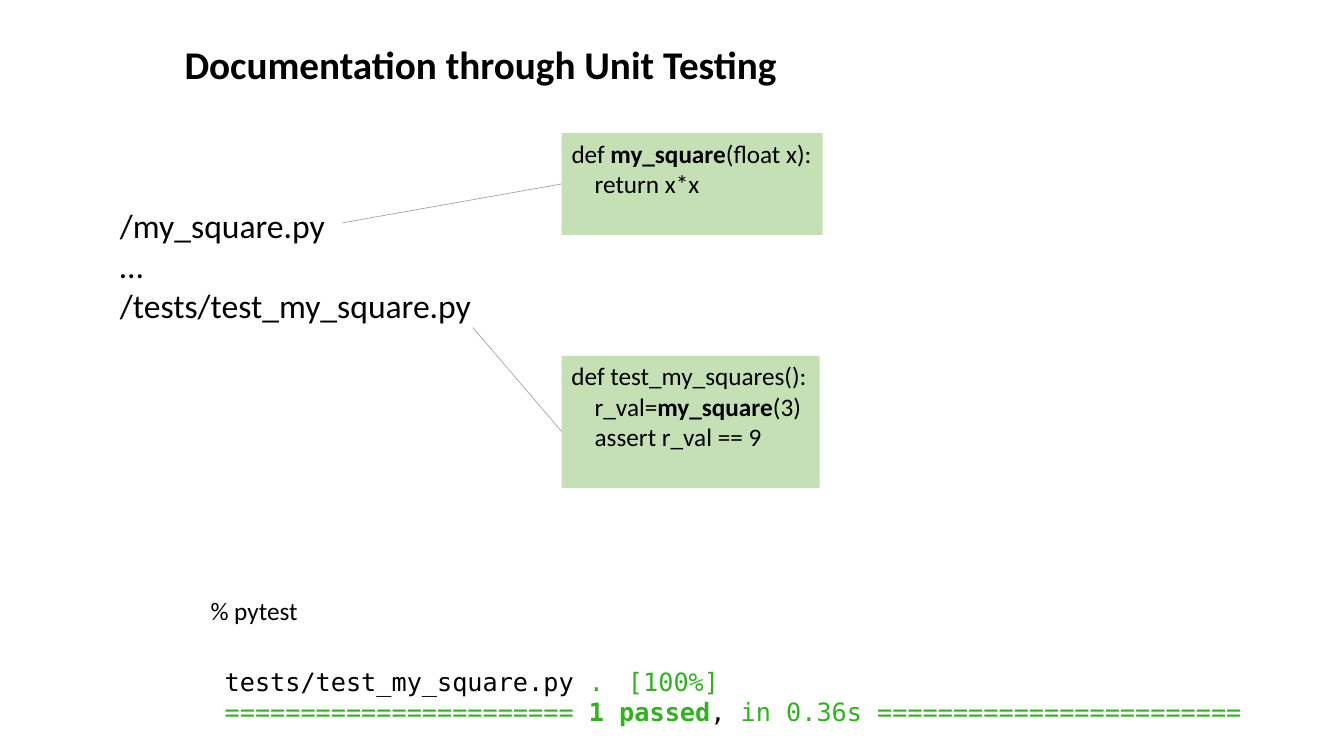
import pptx
import pptx.dml.color
import pptx.enum.shapes
import pptx.enum.text
import pptx.oxml
import pptx.oxml.ns
import pptx.util
from pptx.util import Inches

BLACK = pptx.dml.color.RGBColor(0, 0, 0)
GREEN = pptx.dml.color.RGBColor(0x2F, 0xB4, 0x1D)
PALE = pptx.dml.color.RGBColor(0xC5, 0xE0, 0xB4)
GRAY = pptx.dml.color.RGBColor(0xA6, 0xA6, 0xA6)
SANS = "Calibri"
MONO = "DejaVu Sans Mono"
INDENT = Inches(0.23)
TAB = Inches(7.83)


def add_node(parent, tag):
    node = pptx.oxml.parse_xml(f"<{tag} {pptx.oxml.ns.nsdecls('a')}/>")
    parent.append(node)
    return node


def place(shape, left, top, width, height):
    shape.left, shape.top = Inches(left), Inches(top)
    shape.width, shape.height = Inches(width), Inches(height)


def write(frame, lines, size, face=SANS, bold=False):
    frame.word_wrap = True
    frame.auto_size = pptx.enum.text.MSO_AUTO_SIZE.NONE
    frame.vertical_anchor = pptx.enum.text.MSO_ANCHOR.TOP
    frame.margin_left, frame.margin_right = Inches(0.1), 0
    frame.margin_top = frame.margin_bottom = Inches(0.05)
    for index, (level, parts) in enumerate(lines):
        para = frame.add_paragraph() if index else frame.paragraphs[0]
        para.alignment = pptx.enum.text.PP_ALIGN.LEFT
        para.space_before = 0
        props = para._p.get_or_add_pPr()
        props.set("marL", str(level * INDENT))
        props.set("indent", "0")
        add_node(props, "a:buNone")
        if any("\t" in text for text, *_ in parts):
            stop = add_node(add_node(props, "a:tabLst"), "a:tab")
            stop.set("pos", str(TAB))
            stop.set("algn", "l")
        para.font.name = face
        para.font.size = pptx.util.Pt(size)
        para.font.bold = bold
        colors = {color for _, color, _ in parts}
        if len(colors) == 1:
            para.font.color.rgb = parts[0][1]
        for text, color, strong in parts:
            run = para.add_run()
            run.text = text
            if len(colors) > 1:
                run.font.color.rgb = color
            if strong:
                run.font.bold = True


def plain(text, level=0):
    return level, [(text, BLACK, False)]


def call(before, after, level=0):
    return level, [(before, BLACK, False), ("my_square", BLACK, True),
                   (after, BLACK, False)]


def add_text(slide, spot, lines, face=SANS):
    box = slide.shapes.add_textbox(0, 0, 0, 0)
    place(box, *spot)
    write(box.text_frame, lines, 18, face)


def add_code(slide, spot, lines):
    kind = pptx.enum.shapes.MSO_SHAPE.RECTANGLE
    box = slide.shapes.add_shape(kind, 0, 0, 0, 0)
    place(box, *spot)
    box.shadow.inherit = False
    box.fill.solid()
    box.fill.fore_color.rgb = PALE
    box.line.fill.background()
    write(box.text_frame, lines, 18)
    return box


def add_line(slide, start, end):
    kind = pptx.enum.shapes.MSO_CONNECTOR.STRAIGHT
    line = slide.shapes.add_connector(kind, *map(Inches, start + end))
    line.line.color.rgb = GRAY
    line.line.width = pptx.util.Pt(0.5)
    add_node(line._element.spPr, "a:effectLst")
    return line


def main():
    deck = pptx.Presentation()
    deck.slide_width, deck.slide_height = Inches(13.33), Inches(7.5)
    slide = deck.slides.add_slide(deck.slide_layouts[1])
    title, files = slide.placeholders

    place(title, 1.73, 0.35, 6.14, 0.57)
    write(title.text_frame, [plain("Documentation through Unit Testing")],
          28, bold=True)
    place(files, 1.09, 1.98, 3.72, 1.31)
    names = ["/my_square.py", "…", "/tests/test_my_square.py"]
    write(files.text_frame, [plain(name) for name in names], 24)

    add_code(slide, (5.57, 3.53, 2.56, 1.31), [
        plain("def test_my_squares():"),
        call("r_val=", "(3)", 1),
        plain("assert r_val == 9", 1),
    ])
    square = add_code(slide, (5.57, 1.32, 2.59, 1.01), [
        call("def ", "(float x):"),
        plain("return x*x", 1),
    ])

    add_text(slide, (1.99, 5.86, 1.07, 0.4), [plain("% pytest")])
    add_text(slide, (2.13, 6.56, 10.42, 1.01), [
        (0, [("tests/test_my_square.py ", BLACK, False),
             (".\t[100%]", GREEN, False)]),
        (0, [("=" * 23 + " ", GREEN, False), ("1 passed", GREEN, True),
             (", ", BLACK, False),
             ("in 0.36s " + "=" * 24, GREEN, False)]),
    ], MONO)

    link = add_line(slide, (3.4, 2.21), (5.57, 1.83))
    link.end_connect(square, 1)
    add_line(slide, (4.69, 3.25), (5.57, 4.28))
    deck.save("out.pptx")


if __name__ == "__main__":
    main()
